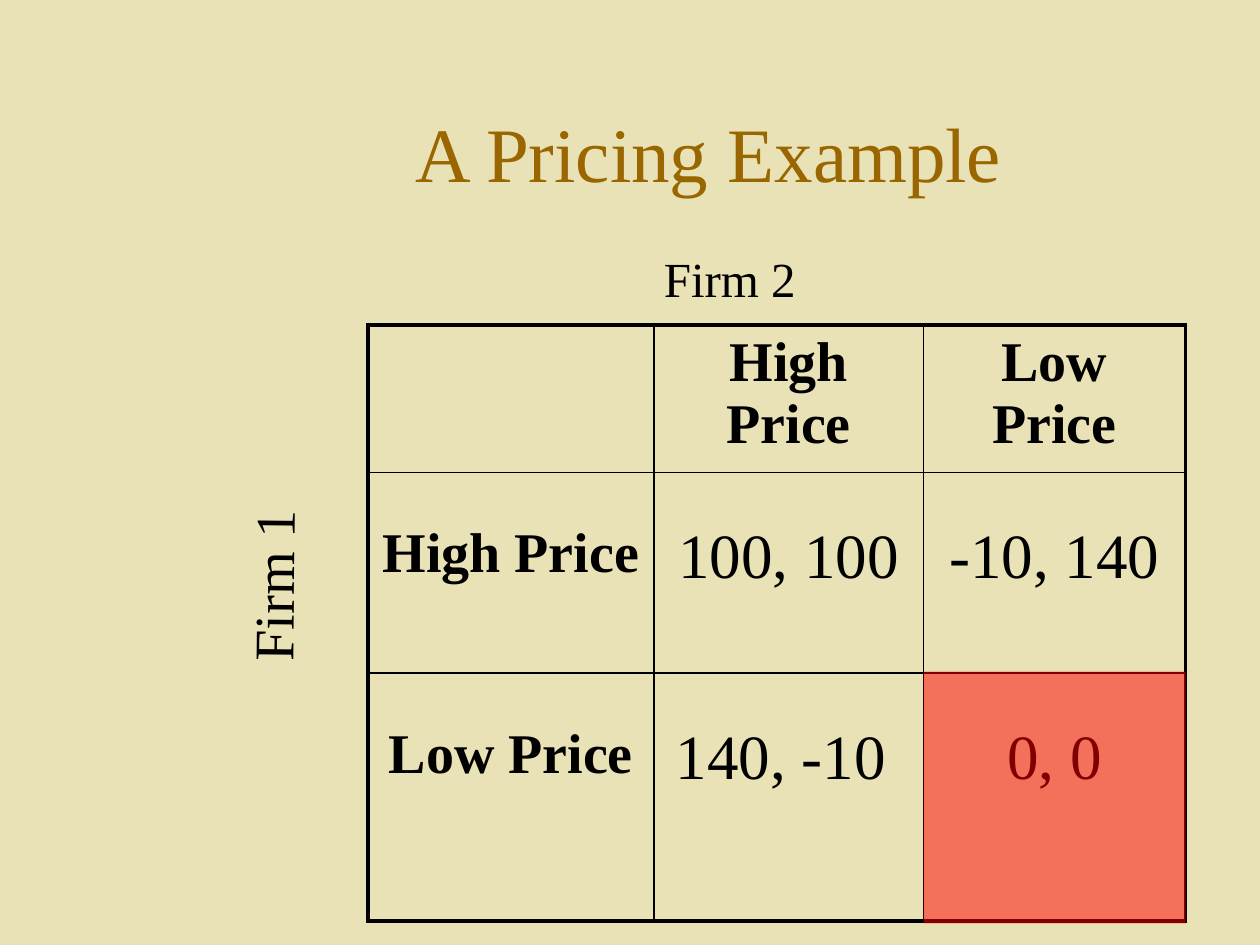
from lxml import etree
from pptx import Presentation
from pptx.dml.color import RGBColor
from pptx.enum.shapes import MSO_SHAPE
from pptx.enum.text import MSO_ANCHOR, PP_ALIGN
from pptx.oxml.ns import qn
from pptx.util import Inches, Pt

CENTER, LEFT = PP_ALIGN.CENTER, PP_ALIGN.LEFT
TOP, MIDDLE = MSO_ANCHOR.TOP, MSO_ANCHOR.MIDDLE
RECTANGLE = MSO_SHAPE.RECTANGLE

SAND = RGBColor(0xE9, 0xE2, 0xB6)
BROWN = RGBColor(0x99, 0x66, 0x00)
BLACK = RGBColor(0, 0, 0)
RED = RGBColor(0xFF, 0, 0)
FONT = "Times New Roman"

PAYOFFS = [
    ["", "High Price", "Low Price"],
    ["High Price", "100, 100", "-10, 140"],
    ["Low Price", "140, -10 ", "0, 0"],
]
TABLE_LEFT, TABLE_TOP = 2.92, 2.58
COLUMN_WIDTHS = [2.27, 2.14, 2.08]
ROW_HEIGHTS = [1.17, 1.59, 1.97]
OUTER_LINE, INNER_LINE = 2.25, 1
HEADING = {"size": Pt(32), "bold": True, "name": FONT}
PAYOFF = {"size": Pt(36), "bold": False, "name": FONT}

# text, (left, top, width, height), size, colour, alignment, anchor, rotation
LABELS = [
    ("A Pricing Example", (1.5, 0.58, 8.25, 1.25), 44, BROWN, CENTER, MIDDLE, 0),
    ("Firm 2", (5.17, 1.92, 1.85, 0.57), 28, BLACK, LEFT, TOP, 0),
    ("Firm 1", (1.11, 3.98, 2.1, 0.63), 32, BLACK, LEFT, MIDDLE, 270.6),
]


def write(frame, text, alignment, color, font_format):
    para = frame.paragraphs[0]
    para.alignment = alignment
    span = para.add_run()
    span.text = text
    span.font.color.rgb = color
    for name, value in font_format.items():
        setattr(span.font, name, value)


def paint(fill, properties, color, opacity=100):
    """Fill with a colour; opacity is a percentage."""
    fill.solid()
    fill.fore_color.rgb = color
    if opacity < 100:
        solid = properties.find(qn("a:solidFill"))
        etree.SubElement(solid[0], qn("a:alpha"), val=str(opacity * 1000))


def add_borders(cell, widths):
    properties = cell._tc.get_or_add_tcPr()
    for side, width in widths.items():
        line = etree.SubElement(properties, qn(f"a:ln{side}"), w=str(Pt(width)))
        solid = etree.SubElement(line, qn("a:solidFill"))
        etree.SubElement(solid, qn("a:srgbClr"), val=str(BLACK))


def add_label(page, text, place, size, color, alignment, anchor, rotation):
    box = page.shapes.add_textbox(*map(Inches, place))
    box.rotation = rotation
    box.text_frame.word_wrap = True
    box.text_frame.vertical_anchor = anchor
    write(box.text_frame, text, alignment, color, {"size": Pt(size), "name": FONT})


def add_payoff_table(page):
    last = len(PAYOFFS) - 1
    place = (TABLE_LEFT, TABLE_TOP, sum(COLUMN_WIDTHS), sum(ROW_HEIGHTS))
    table = page.shapes.add_table(
        len(ROW_HEIGHTS), len(COLUMN_WIDTHS), *map(Inches, place)).table
    table.first_row = table.horz_banding = False
    for column, width in zip(table.columns, COLUMN_WIDTHS):
        column.width = Inches(width)
    for row, height in zip(table.rows, ROW_HEIGHTS):
        row.height = Inches(height)

    for r, texts in enumerate(PAYOFFS):
        for c, text in enumerate(texts):
            cell = table.cell(r, c)
            on_edge = {"L": c == 0, "R": c == last, "T": r == 0, "B": r == last}
            add_borders(cell, {side: OUTER_LINE if edge else INNER_LINE
                               for side, edge in on_edge.items()})
            cell.margin_top = cell.margin_bottom = Inches(0.4 if r else 0.05)
            is_payoff = r > 0 and c > 0
            if is_payoff:
                opacity = 50 if r == c == last else 100
                paint(cell.fill, cell._tc.tcPr, SAND, opacity)
            else:
                cell.fill.background()
            if text:
                write(cell.text_frame, text, CENTER, BLACK,
                      PAYOFF if is_payoff else HEADING)


def add_equilibrium_highlight(page):
    """Cover the bottom right cell with a see-through red box."""
    left = TABLE_LEFT + sum(COLUMN_WIDTHS[:-1])
    top = TABLE_TOP + sum(ROW_HEIGHTS[:-1])
    place = (left, top - 0.01, COLUMN_WIDTHS[-1], 2)
    box = page.shapes.add_shape(RECTANGLE, *map(Inches, place))
    box.shadow.inherit = False
    box.line.fill.background()
    paint(box.fill, box._element.spPr, RED, 50)


def main():
    deck = Presentation()
    deck.slide_width, deck.slide_height = Inches(10), Inches(7.5)
    page = deck.slides.add_slide(deck.slide_layouts[6])
    page.background.fill.solid()
    page.background.fill.fore_color.rgb = SAND
    add_payoff_table(page)
    for label in LABELS:
        add_label(page, *label)
    add_equilibrium_highlight(page)
    deck.save("out.pptx")


if __name__ == "__main__":
    main()
